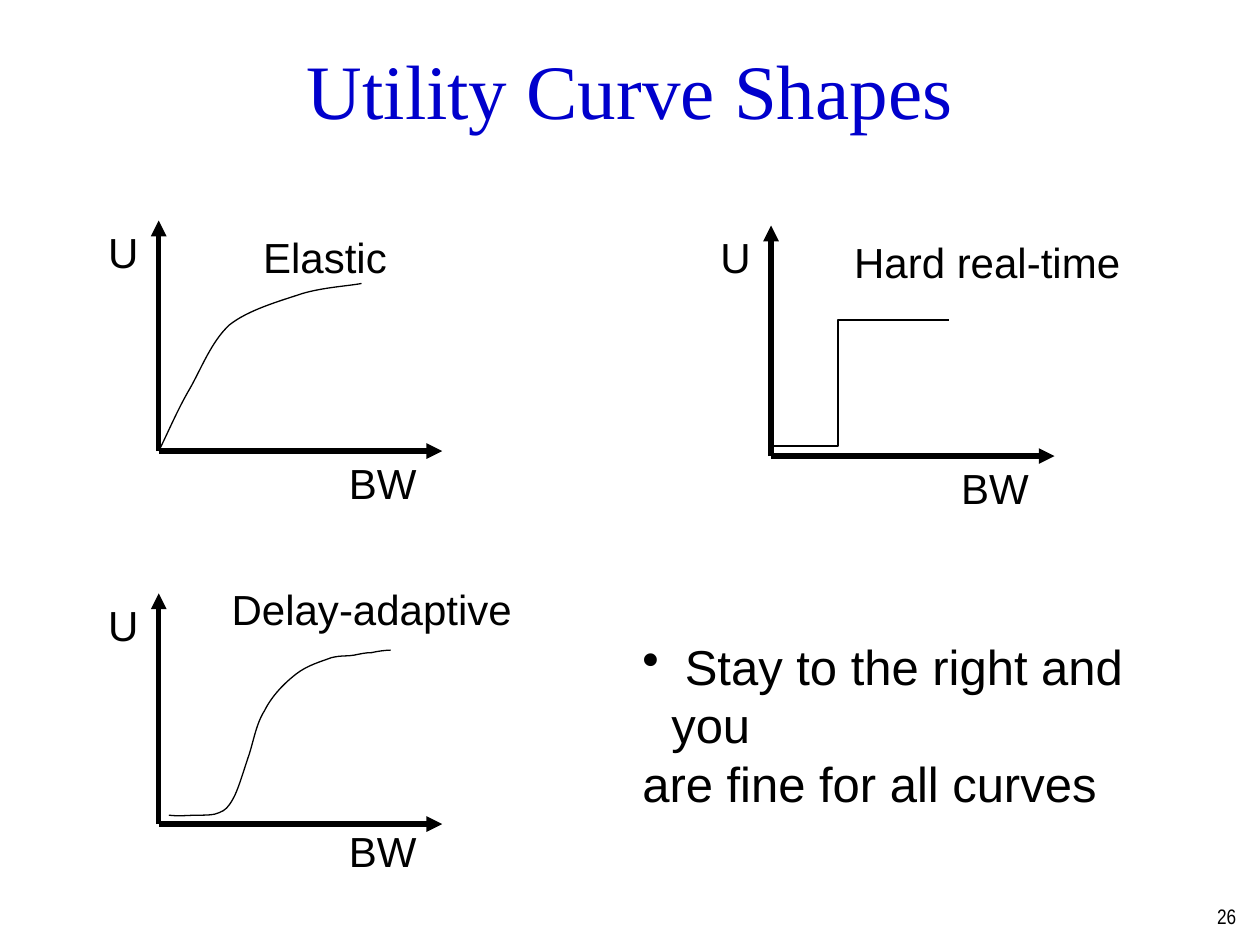
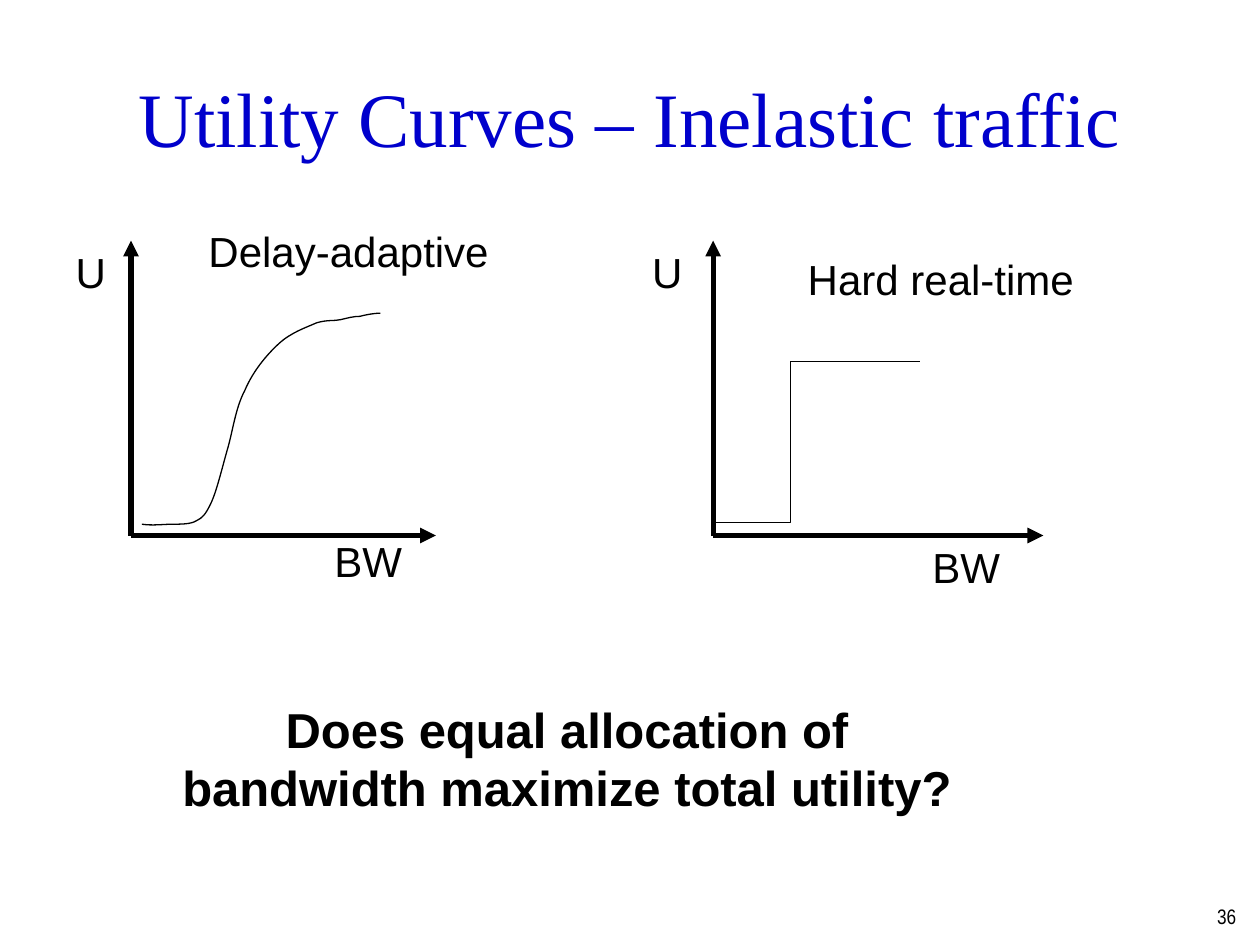
from dataclasses import dataclass

from lxml import etree
from pptx import Presentation
from pptx.dml.color import RGBColor
from pptx.enum.shapes import MSO_CONNECTOR
from pptx.enum.text import MSO_ANCHOR, PP_ALIGN
from pptx.oxml.ns import qn
from pptx.util import Pt

PX = 9144
TITLE_ONLY = 5
STRAIGHT = MSO_CONNECTOR.STRAIGHT
TOP, MIDDLE, BOTTOM = MSO_ANCHOR.TOP, MSO_ANCHOR.MIDDLE, MSO_ANCHOR.BOTTOM
LEFT, CENTER, RIGHT = PP_ALIGN.LEFT, PP_ALIGN.CENTER, PP_ALIGN.RIGHT


@dataclass(frozen=True)
class Theme:
    ink: RGBColor = RGBColor(0, 0, 0)
    title_ink: RGBColor = RGBColor(0, 0, 0xCC)
    heading: tuple = (("name", "Times New Roman"), ("size", Pt(44)), ("bold", False))
    label: tuple = (("name", "Arial"), ("size", Pt(24)), ("bold", False))
    remark: tuple = (("name", "Arial"), ("size", Pt(28)), ("bold", False))
    question: tuple = (("name", "Arial"), ("size", Pt(28)), ("bold", True))
    number: tuple = (("name", "Arial Narrow"), ("size", Pt(12)), ("bold", False))
    axis_width: int = Pt(3)
    curve_width: int = Pt(0.75)


@dataclass(frozen=True)
class Curve:
    name: str
    name_box: tuple
    bandwidth_top: int
    points: tuple
    smooth: bool = True


THEME = Theme()
PLOT_WIDTH, PLOT_HEIGHT = 225, 183
LABEL_HEIGHT = 50

ELASTIC = Curve(
    "Elastic", (73, 4, 118), 183,
    ((0, 183), (8, 167), (15, 150), (25, 133), (34, 117), (42, 96), (56, 83),
     (71, 71), (96, 64), (114, 58), (131, 53), (151, 52), (161, 50)))
HARD_REAL_TIME = Curve(
    "Hard real-time", (56, 4, 231), 183,
    ((0, 175), (53, 175), (53, 75), (141, 75)), smooth=False)
DELAY_ADAPTIVE = Curve(
    "Delay-adaptive", (48, -13, 243), 179,
    ((8, 176), (16, 177), (24, 176), (31, 176), (37, 176), (44, 176), (48, 174),
     (53, 172), (55, 170), (59, 163), (63, 156), (67, 142), (71, 130), (75, 119),
     (77, 104), (84, 93), (90, 81), (100, 71), (109, 64), (118, 57), (129, 54),
     (137, 51), (145, 49), (150, 50), (155, 49), (160, 48), (164, 47), (169, 47),
     (173, 46), (180, 45), (184, 45)))


def emu(*lengths):
    return [round(length * PX) for length in lengths]


def write(frame, lines, style, color=THEME.ink, align=LEFT, anchor=TOP, wrap=True):
    frame.word_wrap = wrap
    frame.vertical_anchor = anchor
    for index, line in enumerate(lines):
        paragraph = frame.add_paragraph() if index else frame.paragraphs[0]
        paragraph.alignment = align
        run = paragraph.add_run()
        run.text = line
        run.font.color.rgb = color
        for attribute, value in style:
            setattr(run.font, attribute, value)


def add_text(shapes, box, lines, style, **layout):
    frame = shapes.add_textbox(*emu(*box)).text_frame
    write(frame, lines, style, **layout)
    return frame


def add_axis(shapes, start, end):
    axis = shapes.add_connector(STRAIGHT, *emu(*start, *end))
    axis.line.color.rgb = THEME.ink
    axis.line.width = THEME.axis_width
    properties = axis.element.spPr
    etree.SubElement(properties.find(qn("a:ln")), qn("a:tailEnd"), type="triangle")
    etree.SubElement(properties, qn("a:effectLst"))


def smooth_outline(outline):
    for track in outline.element.iter(qn("a:path")):
        segments = track.findall(qn("a:lnTo"))
        for first in range(0, len(segments), 3):
            bezier = etree.SubElement(track, qn("a:cubicBezTo"))
            for segment in segments[first:first + 3]:
                bezier.append(segment[0])
                track.remove(segment)


def add_curve(shapes, points, smooth):
    start, *rest = [emu(*point) for point in points]
    builder = shapes.build_freeform(*start, scale=1.0)
    builder.add_line_segments(rest, close=False)
    outline = builder.convert_to_shape()
    outline.fill.background()
    outline.line.color.rgb = THEME.ink
    outline.line.width = THEME.curve_width
    outline.shadow.inherit = False
    if smooth:
        smooth_outline(outline)


def add_plot(slide, box, curve):
    left, top, width, height = box

    def place(x, y):
        return left + x * width / PLOT_WIDTH, top + y * height / PLOT_HEIGHT

    shapes = slide.shapes.add_group_shape().shapes
    origin = place(0, PLOT_HEIGHT)
    for tip in (place(PLOT_WIDTH, PLOT_HEIGHT), place(0, 0)):
        add_axis(shapes, origin, tip)
    add_curve(shapes, [place(*point) for point in curve.points], curve.smooth)
    labels = (("BW", (141, curve.bandwidth_top, 74)), ("U", (-50, 0, 44)),
              (curve.name, curve.name_box))
    for text, (x, y, label_width) in labels:
        add_text(shapes, (*place(x, y), label_width, LABEL_HEIGHT), [text],
                 THEME.label, wrap=False)


def add_titled_slide(deck, title, title_top, number):
    slide = deck.slides.add_slide(deck.slide_layouts[TITLE_ONLY])
    heading = slide.shapes.title
    heading.left, heading.top, heading.width, heading.height = emu(50, title_top, 900, 125)
    write(heading.text_frame, [title], THEME.heading, color=THEME.title_ink,
          align=CENTER, anchor=MIDDLE)
    add_text(slide.shapes, (783, 692, 208, 50), [number], THEME.number,
             align=RIGHT, anchor=BOTTOM)
    return slide


def add_remark(slide, box):
    frame = add_text(slide.shapes, box,
                     [" Stay to the right and you", "are fine for all curves"],
                     THEME.remark)
    bulleted = frame.paragraphs[0]._p.get_or_add_pPr()
    hang = emu(23)[0]
    bulleted.set("marL", str(hang))
    bulleted.set("indent", str(-hang))
    etree.SubElement(bulleted, qn("a:buChar"), char="•")


def build_shapes_slide(deck):
    slide = add_titled_slide(deck, "Utility Curve Shapes", 8, "26")
    add_remark(slide, (500, 500, 466, 103))
    for left, top, curve in ((126, 175, ELASTIC), (612, 179, HARD_REAL_TIME),
                             (126, 471, DELAY_ADAPTIVE)):
        add_plot(slide, (left, top, PLOT_WIDTH, PLOT_HEIGHT), curve)


def build_inelastic_slide(deck):
    slide = add_titled_slide(deck, "Utility Curves – Inelastic traffic", 30, "36")
    add_plot(slide, (566, 191, 262, 234), HARD_REAL_TIME)
    add_plot(slide, (104, 191, 242, 234), DELAY_ADAPTIVE)
    add_text(slide.shapes, (125, 550, 650, 103),
             ["Does equal allocation of bandwidth maximize total utility?"],
             THEME.question, align=CENTER)


def main():
    deck = Presentation()
    deck.slide_width, deck.slide_height = emu(1000, 750)
    build_shapes_slide(deck)
    build_inelastic_slide(deck)
    deck.save("out.pptx")


if __name__ == "__main__":
    main()
